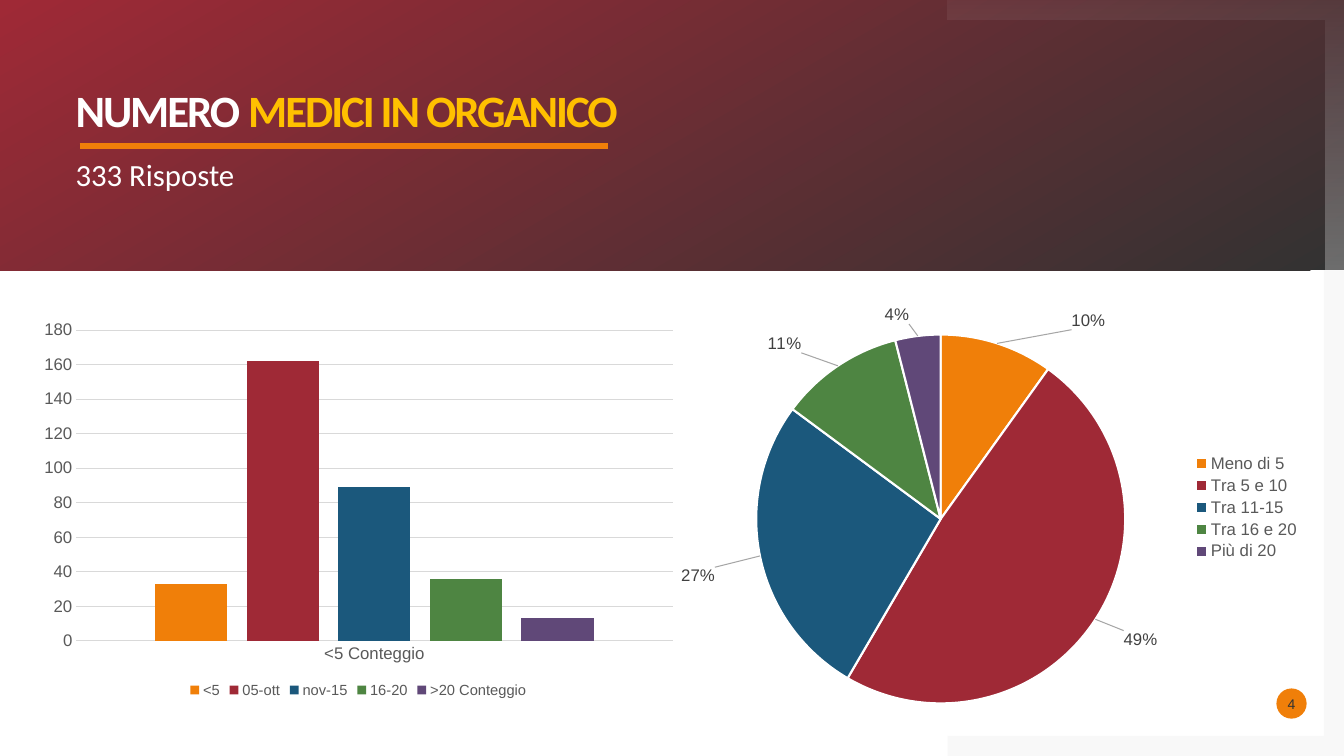
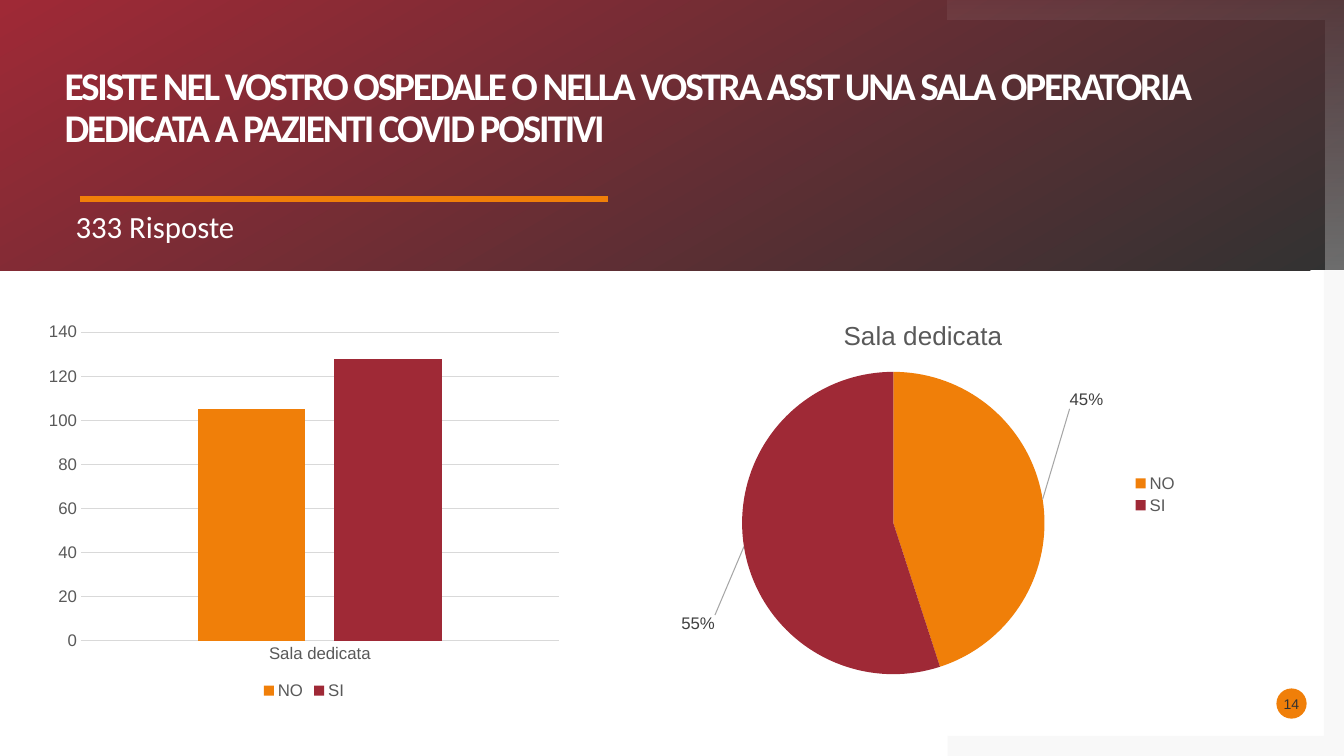
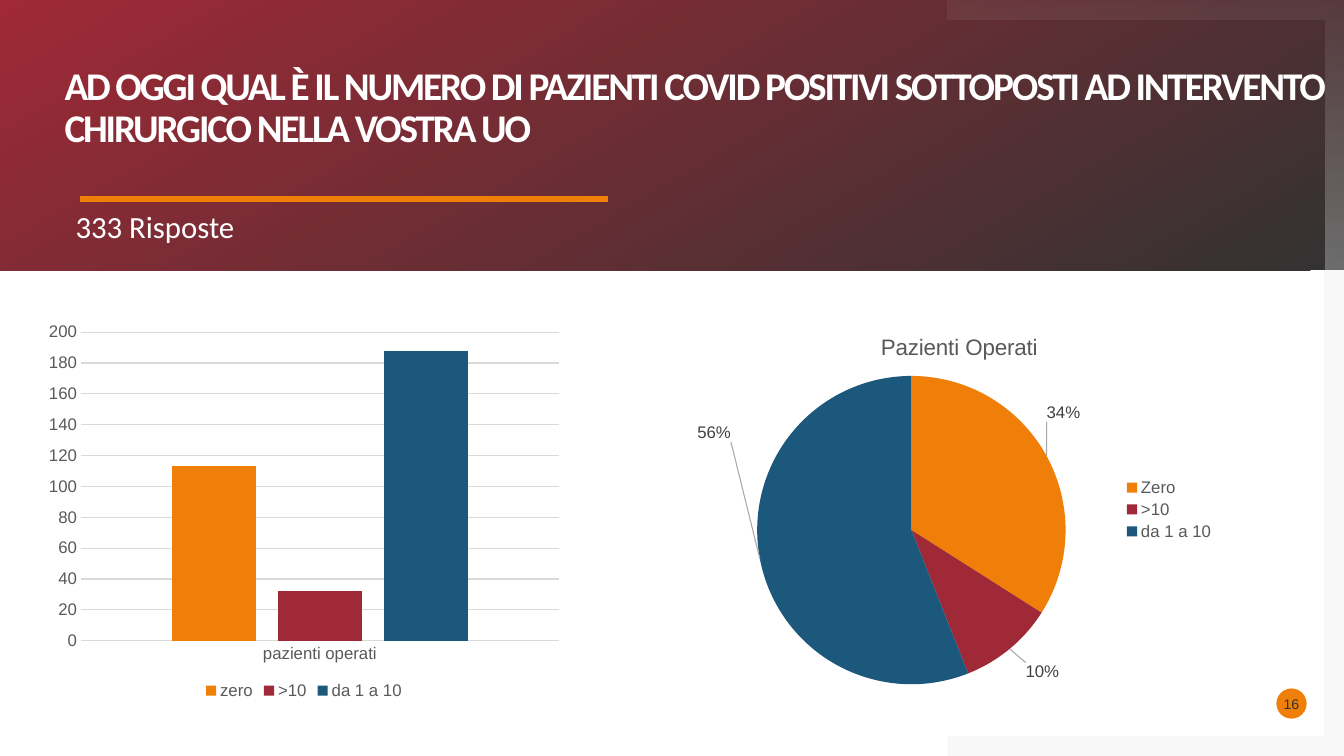
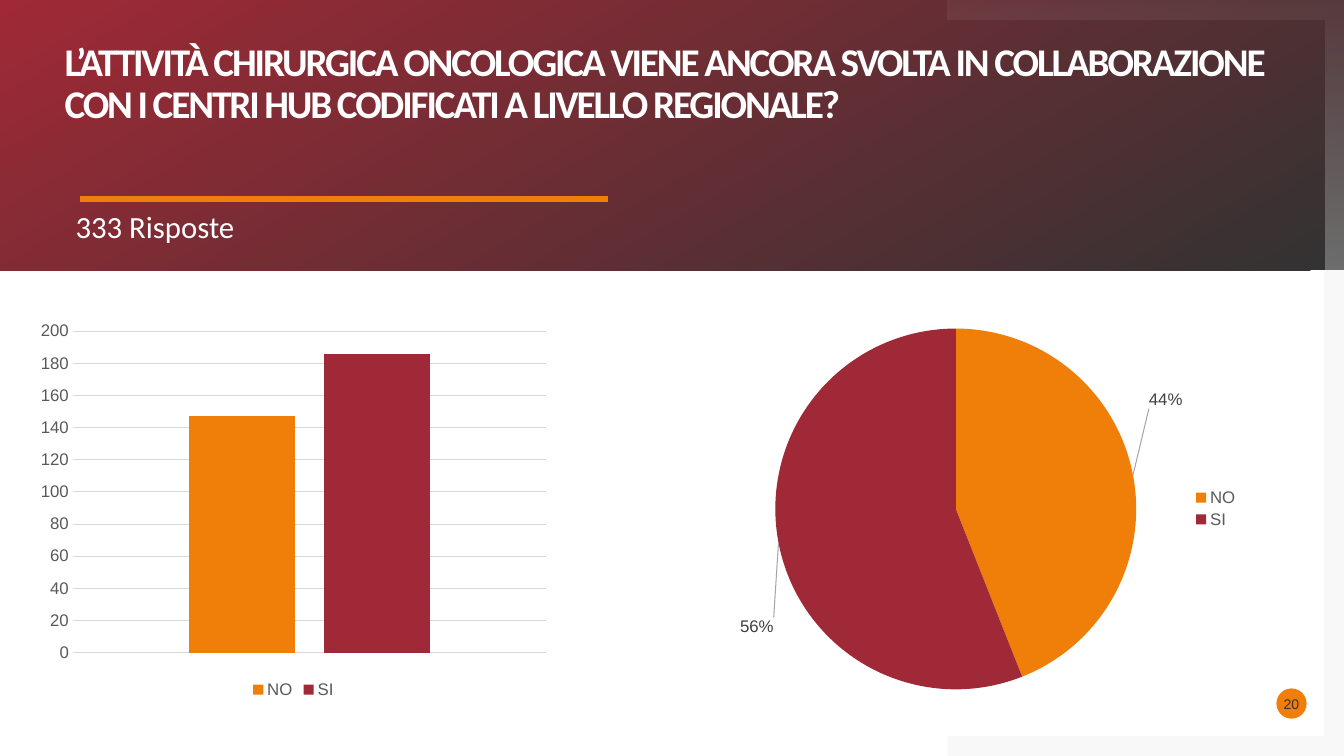
"""Build four survey result slides, each with a column chart and a pie chart."""

from copy import deepcopy
from dataclasses import dataclass
from typing import NamedTuple

from lxml import etree
from pptx import Presentation
from pptx.chart.chart import Chart
from pptx.chart.data import CategoryChartData
from pptx.dml.color import RGBColor
from pptx.enum.chart import XL_CHART_TYPE, XL_LABEL_POSITION, XL_LEGEND_POSITION, XL_TICK_MARK
from pptx.enum.shapes import MSO_CONNECTOR, MSO_SHAPE
from pptx.enum.text import MSO_ANCHOR, PP_ALIGN
from pptx.oxml.ns import qn
from pptx.shapes.autoshape import Shape
from pptx.slide import Slide
from pptx.text.text import Font, TextFrame
from pptx.util import Inches, Pt

COLUMN, PIE = XL_CHART_TYPE.COLUMN_CLUSTERED, XL_CHART_TYPE.PIE
LEGEND_BOTTOM, LEGEND_RIGHT = XL_LEGEND_POSITION.BOTTOM, XL_LEGEND_POSITION.RIGHT
OUTSIDE = XL_LABEL_POSITION.OUTSIDE_END
NO_TICK = XL_TICK_MARK.NONE
STRAIGHT = MSO_CONNECTOR.STRAIGHT
RECT, OVAL = MSO_SHAPE.RECTANGLE, MSO_SHAPE.OVAL
TOP, MIDDLE = MSO_ANCHOR.TOP, MSO_ANCHOR.MIDDLE
CENTER = PP_ALIGN.CENTER


@dataclass(frozen=True)
class Theme:
    heading_font: str = "Calibri"
    body_font: str = "Arial"
    white: RGBColor = RGBColor.from_string("FFFFFF")
    gold: RGBColor = RGBColor.from_string("FFC000")
    dark: RGBColor = RGBColor.from_string("323232")
    orange: RGBColor = RGBColor.from_string("F07F09")
    red: RGBColor = RGBColor.from_string("9F2936")
    blue: RGBColor = RGBColor.from_string("1B587C")
    green: RGBColor = RGBColor.from_string("4E8542")
    purple: RGBColor = RGBColor.from_string("604878")
    frame: RGBColor = RGBColor.from_string("808080")
    grid: RGBColor = RGBColor.from_string("D9D9D9")
    leader: RGBColor = RGBColor.from_string("A6A6A6")
    chart_text: RGBColor = RGBColor.from_string("595959")
    label_text: RGBColor = RGBColor.from_string("404040")
    subtitle_size: float = 22
    badge_size: float = 10
    chart_size: float = 12
    tracking: int = -150

    @property
    def series(self) -> tuple[RGBColor, ...]:
        return self.orange, self.red, self.blue, self.green, self.purple


THEME = Theme()
WIDTH, HEIGHT = 13.33, 7.5
BAND_HEIGHT = 2.68
CORNER_LEFT, CORNER_EDGE = 9.4, 0.2
INNER_RIGHT = WIDTH - CORNER_EDGE


class Box(NamedTuple):
    left: float
    top: float
    width: float
    height: float

    def inches(self) -> tuple[Inches, ...]:
        return tuple(Inches(v) for v in self)


class Bar(NamedTuple):
    name: str
    value: int


class Slice(NamedTuple):
    name: str
    value: int
    dx: float
    dy: float


@dataclass(frozen=True)
class Columns:
    box: Box
    category: str
    bars: tuple[Bar, ...]
    legend_size: float = THEME.chart_size
    show_category: bool = True


@dataclass(frozen=True)
class Pie:
    box: Box
    center: tuple[float, float]
    radius: float
    slices: tuple[Slice, ...]
    title: str = ""
    title_size: float = 16
    outlined: bool = False


@dataclass(frozen=True)
class Survey:
    number: int
    title: str
    title_box: Box
    columns: Columns
    pie: Pie
    accent: str = ""
    title_size: float = 28
    rule_top: float = 1.97


SURVEYS = (
    Survey(
        4, "NUMERO ", Box(0.75, 0.88, 8.27, 0.4),
        Columns(Box(0.31, 3.11, 6.49, 3.86), "<5 Conteggio",
                (Bar("<5", 33), Bar("05-ott", 162), Bar("nov-15", 89), Bar("16-20", 36),
                 Bar(">20 Conteggio", 13)), legend_size=10.5),
        Pie(Box(6.69, 2.95, 6.31, 4.17), (9.33, 5.15), 1.83,
            (Slice("Meno di 5", 10, 0.72, -0.08), Slice("Tra 5 e 10", 49, 0.23, 0.08),
             Slice("Tra 11-15", 27, -0.39, 0.1), Slice("Tra 16 e 20", 11, -0.33, -0.08),
             Slice("Più di 20", 4, -0.08, -0.06)), outlined=True),
        accent="MEDICI IN ORGANICO", title_size=32, rule_top=1.45,
    ),
    Survey(
        14,
        "ESISTE NEL VOSTRO OSPEDALE O NELLA VOSTRA ASST UNA SALA OPERATORIA "
        "DEDICATA A PAZIENTI COVID POSITIVI",
        Box(0.64, 0.66, 12.5, 0.91),
        Columns(Box(0.38, 3.13, 5.27, 3.85), "Sala dedicata", (Bar("NO", 105), Bar("SI", 128))),
        Pie(Box(6.52, 2.98, 5.27, 3.85), (8.86, 5.19), 1.5,
            (Slice("NO", 45, 0.21, -0.89), Slice("SI", 55, -0.23, 0.67)),
            title="Sala dedicata", title_size=18.6),
    ),
    Survey(
        16,
        "AD OGGI QUAL È IL NUMERO DI PAZIENTI COVID POSITIVI SOTTOPOSTI AD INTERVENTO "
        "CHIRURGICO NELLA VOSTRA UO",
        Box(0.64, 0.66, 12.5, 0.91),
        Columns(Box(0.38, 3.13, 5.27, 3.85), "pazienti operati",
                (Bar("zero", 113), Bar(">10", 32), Bar("da 1 a 10", 188))),
        Pie(Box(6.88, 3.13, 5.27, 3.85), (9.04, 5.26), 1.53,
            (Slice("Zero", 34, -0.05, -0.31), Slice(">10", 10, 0.12, 0.09),
             Slice("da 1 a 10", 56, -0.23, -1.35)),
            title="Pazienti Operati"),
    ),
    Survey(
        20,
        "L’ATTIVITÀ CHIRURGICA ONCOLOGICA VIENE ANCORA SVOLTA IN COLLABORAZIONE "
        "CON I CENTRI HUB CODIFICATI A LIVELLO REGIONALE?",
        Box(0.64, 0.42, 12.5, 1.15),
        Columns(Box(0.3, 3.12, 5.22, 3.85), "1", (Bar("NO", 147), Bar("SI", 186)),
                show_category=False),
        Pie(Box(7.17, 3.12, 5.22, 3.85), (9.48, 5.05), 1.79,
            (Slice("NO", 44, 0.1, -0.65), Slice("SI", 56, 0.01, 0.73))),
    ),
)


def style_font(font: Font, name: str, size: float, color: RGBColor, bold: bool = False) -> None:
    font.name, font.size, font.bold = name, Pt(size), bold
    font.color.rgb = color


def set_alpha(sp: Shape, *percents: int) -> None:
    for color, percent in zip(sp._element.spPr.iter(qn("a:srgbClr")), percents):
        etree.SubElement(color, qn("a:alpha"), val=str(percent * 1000))


def fill_gradient(sp: Shape, colors: tuple[RGBColor, RGBColor], angle: int) -> None:
    sp.fill.gradient()
    sp.fill.gradient_angle = angle
    for stop, color in zip(sp.fill.gradient_stops, colors):
        stop.color.rgb = color


def clear_frame(tf: TextFrame, anchor: MSO_ANCHOR) -> None:
    tf.margin_left = tf.margin_top = tf.margin_right = tf.margin_bottom = 0
    tf.vertical_anchor = anchor
    tf.word_wrap = True


def add_plain_shape(s: Slide, kind: MSO_SHAPE, box: Box) -> Shape:
    sp = s.shapes.add_shape(kind, *box.inches())
    sp.shadow.inherit = False
    sp.line.fill.background()
    return sp


def add_outline(s: Slide, points: list[tuple[float, float]]) -> Shape:
    start, *rest = [(Inches(x), Inches(y)) for x, y in points]
    builder = s.shapes.build_freeform(*start)
    builder.add_line_segments(rest, close=True)
    sp = builder.convert_to_shape()
    sp.shadow.inherit = False
    sp.line.fill.background()
    return sp


def add_backdrop(s: Slide) -> None:
    lower = add_outline(s, [
        (INNER_RIGHT, BAND_HEIGHT), (WIDTH, BAND_HEIGHT), (WIDTH, HEIGHT), (CORNER_LEFT, HEIGHT),
        (CORNER_LEFT, HEIGHT - CORNER_EDGE), (INNER_RIGHT, HEIGHT - CORNER_EDGE)])
    lower.fill.solid()
    lower.fill.fore_color.rgb = THEME.frame
    set_alpha(lower, 5)

    band = add_plain_shape(s, RECT, Box(0, 0, WIDTH, BAND_HEIGHT))
    fill_gradient(band, (THEME.dark, THEME.red), 120)

    upper = add_outline(s, [
        (CORNER_LEFT, 0), (WIDTH, 0), (WIDTH, BAND_HEIGHT), (INNER_RIGHT, BAND_HEIGHT),
        (INNER_RIGHT, CORNER_EDGE), (CORNER_LEFT, CORNER_EDGE)])
    fill_gradient(upper, (THEME.white, THEME.white), 270)
    set_alpha(upper, 5, 30)


def add_title(s: Slide, survey: Survey) -> None:
    tf = s.shapes.add_textbox(*survey.title_box.inches()).text_frame
    clear_frame(tf, TOP)
    p = tf.paragraphs[0]
    p.line_spacing = 0.9
    style_font(p.font, THEME.heading_font, survey.title_size, THEME.white, bold=True)
    for text, color in ((survey.title, THEME.white), (survey.accent, THEME.gold)):
        if text:
            r = p.add_run()
            r.text = text
            r.font.color.rgb = color
            r._r.get_or_add_rPr().set("spc", str(THEME.tracking))


def add_subtitle(s: Slide, rule_top: float) -> None:
    y = Inches(rule_top)
    rule = s.shapes.add_connector(STRAIGHT, Inches(0.79), y, Inches(6.03), y)
    rule.line.color.rgb = THEME.orange
    rule.line.width = Pt(4.32)
    etree.SubElement(rule._element.spPr, qn("a:effectLst"))

    tf = s.shapes.add_textbox(*Box(0.75, rule_top + 0.09, 8.27, 0.39).inches()).text_frame
    clear_frame(tf, TOP)
    p = tf.paragraphs[0]
    p.text = "333 Risposte"
    style_font(p.font, THEME.heading_font, THEME.subtitle_size, THEME.white)


def add_badge(s: Slide, number: int) -> None:
    sp = add_plain_shape(s, OVAL, Box(12.66, 6.83, 0.3, 0.3))
    sp.fill.solid()
    sp.fill.fore_color.rgb = THEME.orange
    clear_frame(sp.text_frame, MIDDLE)
    p = sp.text_frame.paragraphs[0]
    p.text = str(number)
    p.alignment = CENTER
    style_font(p.font, THEME.body_font, THEME.badge_size, THEME.dark)


def add_chart(s: Slide, kind: XL_CHART_TYPE, box: Box, data: CategoryChartData,
              legend: XL_LEGEND_POSITION, legend_size: float) -> Chart:
    chart = s.shapes.add_chart(kind, *box.inches(), data).chart
    style_font(chart.font, THEME.body_font, THEME.chart_size, THEME.chart_text)
    chart.has_title = False
    chart.has_legend = True
    chart.legend.position = legend
    chart.legend.include_in_layout = False
    style_font(chart.legend.font, THEME.body_font, legend_size, THEME.chart_text)
    return chart


def add_columns(s: Slide, columns: Columns) -> None:
    data = CategoryChartData()
    data.categories = [columns.category]
    for bar in columns.bars:
        data.add_series(bar.name, [bar.value])
    chart = add_chart(s, COLUMN, columns.box, data, LEGEND_BOTTOM, columns.legend_size)
    plot = chart.plots[0]
    plot.vary_by_categories = False
    plot.gap_width, plot.overlap = 219, -27
    for series, color in zip(plot.series, THEME.series):
        series.format.fill.solid()
        series.format.fill.fore_color.rgb = color
    for axis in (chart.category_axis, chart.value_axis):
        axis.major_tick_mark = axis.minor_tick_mark = NO_TICK
        style_font(axis.tick_labels.font, THEME.body_font, THEME.chart_size, THEME.chart_text)
    chart.category_axis.visible = columns.show_category
    chart.value_axis.has_major_gridlines = True
    chart.value_axis.format.line.fill.background()
    for holder in (chart.category_axis, chart.value_axis.major_gridlines):
        holder.format.line.color.rgb = THEME.grid
        holder.format.line.width = Pt(0.75)


def manual_layout(**settings: str | float) -> etree._Element:
    layout = etree.Element(qn("c:layout"))
    manual = etree.SubElement(layout, qn("c:manualLayout"))
    for name, value in settings.items():
        text = value if isinstance(value, str) else f"{value:.4f}"
        etree.SubElement(manual, qn(f"c:{name}"), val=text)
    return layout


def place_plot(chart: Chart, pie: Pie) -> None:
    area = chart._chartSpace.find(f".//{qn('c:plotArea')}")
    for old in area.findall(qn("c:layout")):
        area.remove(old)
    box, (x, y) = pie.box, pie.center
    area.insert(0, manual_layout(
        layoutTarget="inner", xMode="edge", yMode="edge",
        x=(x - pie.radius - box.left) / box.width, y=(y - pie.radius - box.top) / box.height,
        w=2 * pie.radius / box.width, h=2 * pie.radius / box.height))


def place_labels(chart: Chart, pie: Pie) -> None:
    labels = chart.plots[0].series[0].data_labels
    labels.show_percentage, labels.show_value = True, False
    labels.position = OUTSIDE
    style_font(labels.font, THEME.body_font, THEME.chart_size, THEME.label_text)
    group = labels._element
    shared = [child for child in group if child.tag != qn("c:showLeaderLines")]
    for i, part in enumerate(pie.slices):
        label = etree.Element(qn("c:dLbl"))
        etree.SubElement(label, qn("c:idx"), val=str(i))
        label.append(manual_layout(x=part.dx / pie.box.width, y=part.dy / pie.box.height))
        label.extend([deepcopy(child) for child in shared])
        group.insert(i, label)
    for old in group.findall(qn("c:showLeaderLines")):
        group.remove(old)
    etree.SubElement(group, qn("c:showLeaderLines"), val="1")
    leader = etree.SubElement(group, qn("c:leaderLines"))
    line = etree.SubElement(etree.SubElement(leader, qn("c:spPr")), qn("a:ln"), w=str(Pt(0.75)))
    fill = etree.SubElement(line, qn("a:solidFill"))
    etree.SubElement(fill, qn("a:srgbClr"), val=str(THEME.leader))


def add_pie(s: Slide, pie: Pie) -> None:
    data = CategoryChartData()
    data.categories = [part.name for part in pie.slices]
    data.add_series(pie.title or "Series 1", [part.value for part in pie.slices])
    chart = add_chart(s, PIE, pie.box, data, LEGEND_RIGHT, THEME.chart_size)
    chart.plots[0].vary_by_categories = True
    if pie.title:
        chart.has_title = True
        chart.chart_title.include_in_layout = False
        p = chart.chart_title.text_frame.paragraphs[0]
        p.text = pie.title
        style_font(p.font, THEME.body_font, pie.title_size, THEME.chart_text)
    series = chart.plots[0].series[0]
    for i, color in zip(range(len(pie.slices)), THEME.series):
        fmt = series.points[i].format
        fmt.fill.solid()
        fmt.fill.fore_color.rgb = color
        if pie.outlined:
            fmt.line.color.rgb = THEME.white
            fmt.line.width = Pt(1.5)
        else:
            fmt.line.fill.background()
    place_plot(chart, pie)
    place_labels(chart, pie)


def main() -> None:
    prs = Presentation()
    prs.slide_width, prs.slide_height = Inches(WIDTH), Inches(HEIGHT)
    for survey in SURVEYS:
        s = prs.slides.add_slide(prs.slide_layouts[6])
        add_backdrop(s)
        add_title(s, survey)
        add_badge(s, survey.number)
        add_subtitle(s, survey.rule_top)
        add_pie(s, survey.pie)
        add_columns(s, survey.columns)
    prs.save("out.pptx")


if __name__ == "__main__":
    main()
